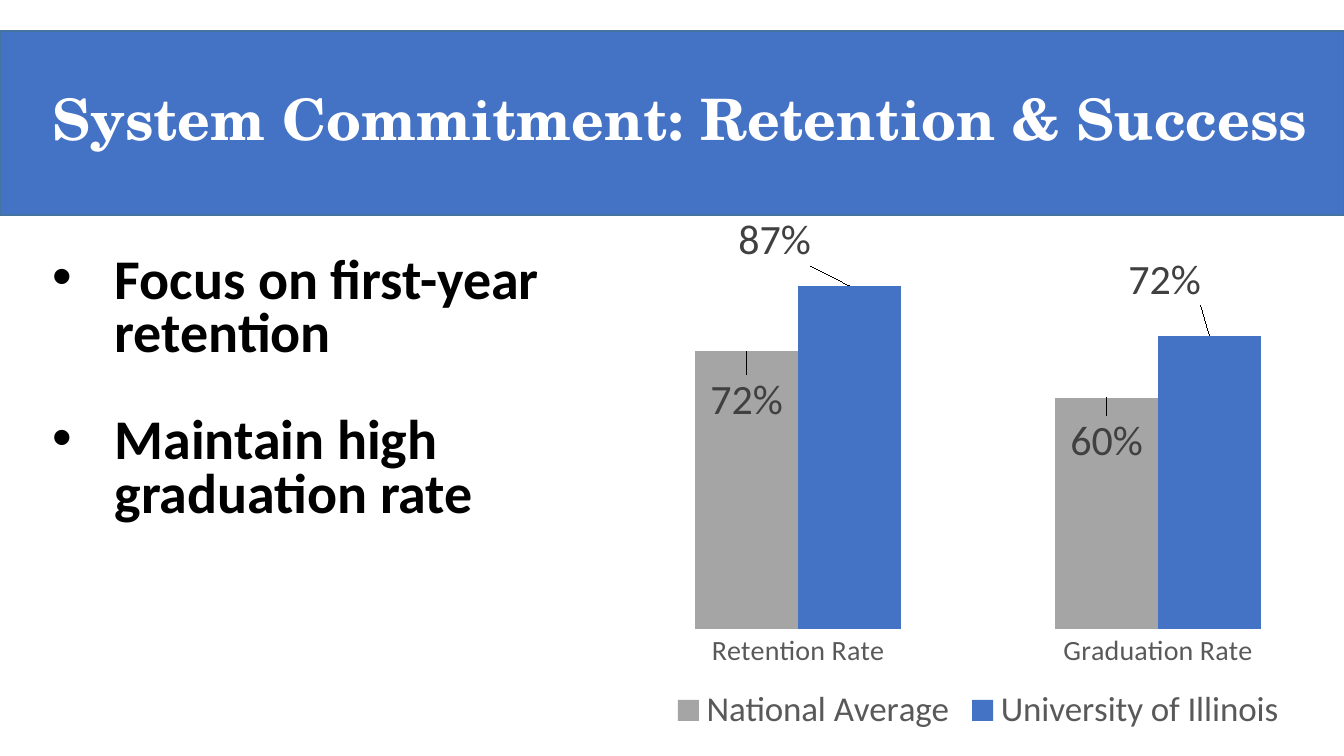
from dataclasses import dataclass
from lxml.etree import SubElement
from pptx import Presentation
from pptx.chart.data import CategoryChartData
from pptx.dml.color import RGBColor
from pptx.enum.chart import XL_CHART_TYPE, XL_LABEL_POSITION, XL_LEGEND_POSITION, XL_TICK_MARK
from pptx.enum.shapes import MSO_SHAPE
from pptx.enum.text import MSO_ANCHOR, MSO_AUTO_SIZE, PP_ALIGN
from pptx.oxml.ns import qn
from pptx.util import Inches, Pt


@dataclass
class Theme:
    head: str = "TeX Gyre Schola"
    body: str = "Calibri"
    blue: str = "4472C4"
    edge: str = "43739E"
    gray: str = "A5A5A5"
    white: str = "FFFFFF"
    black: str = "000000"
    axis: str = "595959"
    label: str = "404040"
    title_pt: float = 40.8
    list_pt: float = 40
    axis_pt: float = 20
    legend_pt: float = 25
    label_pt: float = 30


theme = Theme()
COLS, ROWS = 160, 90

prs = Presentation()
prs.slide_width, prs.slide_height = Inches(13.33), Inches(7.5)
col, row = prs.slide_width / COLS, prs.slide_height / ROWS
s = prs.slides.add_slide(prs.slide_layouts[1])
title, body = s.placeholders


def style(font, name, size, color, bold=False):
    font.name, font.size, font.bold = name, Pt(size), bold
    font.color.rgb = RGBColor.from_string(color)


def add_layout(parent, **values):
    layout = parent.makeelement(qn("c:layout"))
    manual = SubElement(layout, qn("c:manualLayout"))
    for key, val in values.items():
        SubElement(manual, qn("c:" + key)).set("val", str(val))
    for old in parent.findall(qn("c:layout")):
        parent.remove(old)
    return layout


band = s.shapes.add_shape(MSO_SHAPE.RECTANGLE, 0, int(3.7 * row), prs.slide_width, int(21.9 * row))
band.shadow.inherit = False
band.fill.solid()
band.fill.fore_color.rgb = RGBColor.from_string(theme.blue)
band.line.color.rgb = RGBColor.from_string(theme.edge)
band.line.width = Pt(1)
title.element.addprevious(band.element)

for sp, (x, y, w, h) in ((title, (1, 10.9, 160, 10.2)), (body, (-1, 29.9, 72.2, 40))):
    sp.left, sp.top, sp.width, sp.height = int(x * col), int(y * row), int(w * col), int(h * row)
    tf = sp.text_frame
    tf.word_wrap = True
    tf.auto_size = MSO_AUTO_SIZE.NONE
    tf.vertical_anchor = MSO_ANCHOR.TOP

p = title.text_frame.paragraphs[0]
p.alignment = PP_ALIGN.CENTER
p.line_spacing = 0.8
r = p.add_run()
r.text = "System Commitment: Retention & Success"
style(r.font, theme.head, theme.title_pt, theme.white, True)

tf = body.text_frame
for i, goal in enumerate(("Focus on first-year retention", "Maintain high graduation rate")):
    p = tf.add_paragraph() if i else tf.paragraphs[0]
    pPr = p._p.get_or_add_pPr()
    pPr.set("marL", str(Inches(1.12)))
    pPr.set("indent", str(Inches(-0.62)))
    SubElement(pPr, qn("a:buChar")).set("char", "•")
    p.line_spacing = 0.8
    p.space_before = Pt(38 * i)
    r = p.add_run()
    r.text = goal
    style(r.font, theme.body, theme.list_pt, theme.black, True)

data = CategoryChartData(number_format="0%")
data.categories = ["Retention Rate", "Graduation Rate"]
data.add_series("National Average", (0.72, 0.6))
data.add_series("University of Illinois", (0.89, 0.76))
chart = s.shapes.add_chart(XL_CHART_TYPE.COLUMN_CLUSTERED, int(71.8 * col), int(25.6 * row),
                           int(89.3 * col), int(62.3 * row), data).chart
chart.has_title = False
style(chart.font, theme.body, 10, theme.black)
chart.has_legend = True
chart.legend.position = XL_LEGEND_POSITION.BOTTOM
chart.legend.include_in_layout = False
style(chart.legend.font, theme.body, theme.legend_pt, theme.axis)

cat, val = chart.category_axis, chart.value_axis
cat.major_tick_mark = XL_TICK_MARK.NONE
cat.format.line.fill.background()
style(cat.tick_labels.font, theme.body, theme.axis_pt, theme.axis)
val.minimum_scale, val.maximum_scale = 0, 1
val.has_major_gridlines = False
val.visible = False

area = chart.plots[0]._element.getparent()
area.insert(0, add_layout(area, layoutTarget="inner", xMode="edge", yMode="edge",
                          x=0.02, y=0.05, w=0.96, h=0.74))
plot = chart.plots[0]
plot.gap_width, plot.overlap = 150, 0
plot.vary_by_categories = False

looks = (
    (theme.gray, (None, None), ((0, 0.15), (0, 0.14))),
    (theme.blue, ("87%", "72%"), ((-0.1, -0.03), (-0.06, -0.05))),
)
for ser, (color, texts, shifts) in zip(plot.series, looks):
    ser.format.fill.solid()
    ser.format.fill.fore_color.rgb = RGBColor.from_string(color)
    labels = ser.data_labels
    labels.show_value = True
    labels.number_format, labels.number_format_is_linked = "0%", False
    labels.position = XL_LABEL_POSITION.OUTSIDE_END
    style(labels.font, theme.body, theme.label_pt, theme.label)
    for i, (text, (dx, dy)) in enumerate(zip(texts, shifts)):
        label = ser.points[i].data_label
        if text:
            r = label.text_frame.paragraphs[0].add_run()
            r.text = text
            font = r.font
        else:
            font = label.font
        style(font, theme.body, theme.label_pt, theme.label)
        label.position = XL_LABEL_POSITION.OUTSIDE_END
        dLbl = labels._element.findall(qn("c:dLbl"))[i]
        dLbl.insert(1, add_layout(dLbl, x=dx, y=dy))

prs.save("out.pptx")
